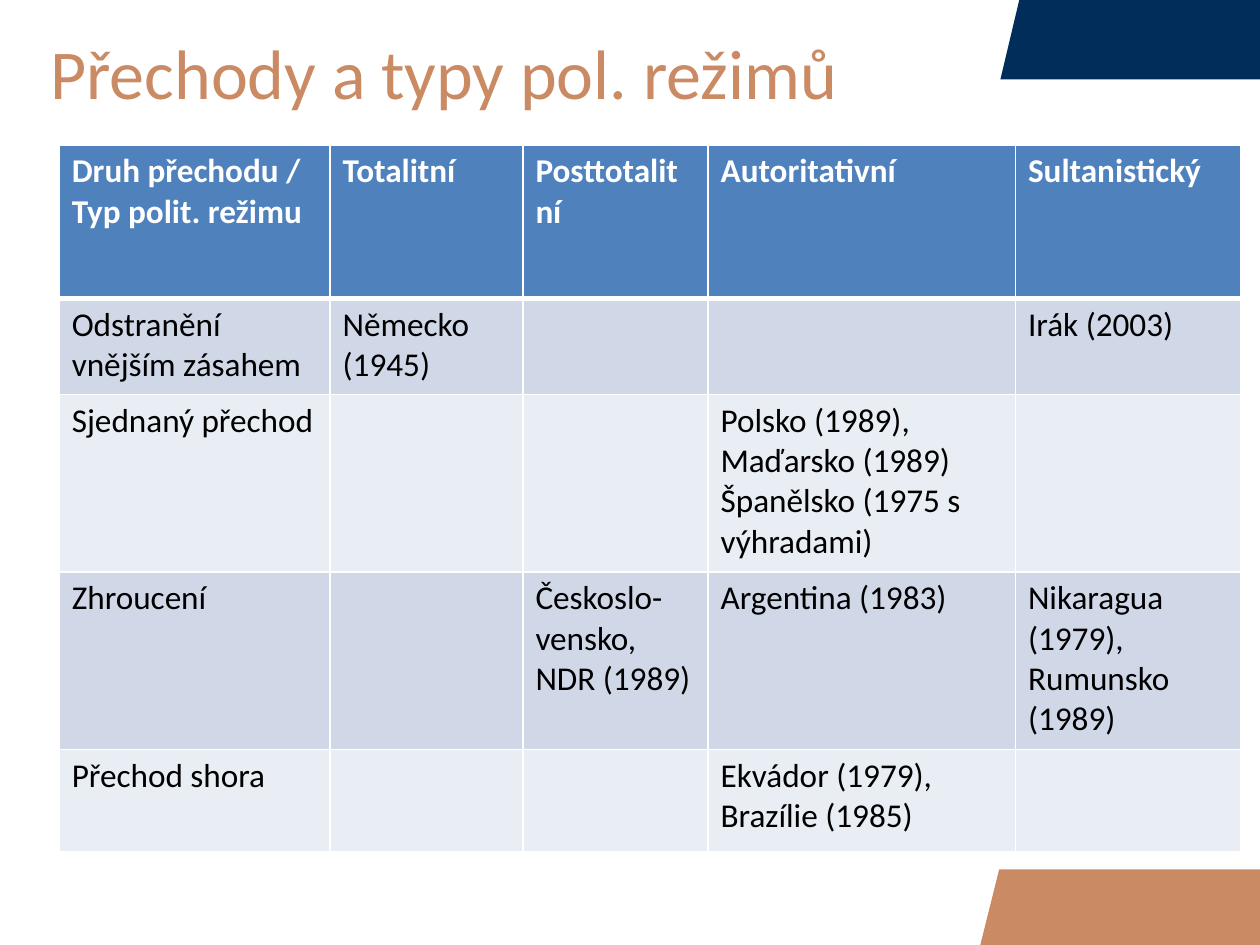
from lxml import etree
from pptx import Presentation
from pptx.dml.color import RGBColor
from pptx.enum.text import MSO_ANCHOR
from pptx.oxml.ns import qn
from pptx.util import Inches, Pt

MIDDLE = MSO_ANCHOR.MIDDLE
FONT = "Calibri"
COLORS = {
    "navy": "002D5A", "copper": "CA8A64", "head": "4F81BD",
    "odd": "D0D8E8", "even": "E9EDF4", "white": "FFFFFF", "black": "000000",
}
TITLE = "Přechody a typy pol. režimů"
ROWS = [
    ["Druh přechodu / Typ polit. režimu", "Totalitní", "Posttotalitní",
     "Autoritativní", "Sultanistický"],
    ["Odstranění vnějším zásahem", "Německo (1945)", "", "", "Irák (2003)"],
    ["Sjednaný přechod", "", "",
     "Polsko (1989), Maďarsko (1989) Španělsko (1975 s výhradami)", ""],
    ["Zhroucení", "", "Českoslo-vensko, NDR (1989)", "Argentina (1983)",
     "Nikaragua (1979), Rumunsko (1989)"],
    ["Přechod shora", "", "", "Ekvádor (1979), Brazílie (1985)", ""],
]
WIDTHS = [2.15, 1.53, 1.47, 2.44, 1.79]
HEIGHTS = [1.22, 0.76, 1.41, 1.41, 0.81]
# Corner bands: color, left, top, bottom
BANDS = [("navy", 7.94, 0, 0.63), ("copper", 7.78, 6.9, 7.5)]
SLANT = 0.15


def rgb(name):
    return RGBColor.from_string(COLORS[name])


def style(par, size, color, bold=False):
    font = par.font
    font.name, font.size, font.bold = FONT, Pt(size), bold
    font.color.rgb = rgb(color)


def add_band(slide, color, left, top, bottom):
    points = [(left + SLANT, top), (10, top), (10, bottom)]
    build = slide.shapes.build_freeform(Inches(left), Inches(bottom), 1)
    build.add_line_segments([(Inches(x), Inches(y)) for x, y in points])
    band = build.convert_to_shape()
    band.shadow.inherit = False
    band.fill.solid()
    band.fill.fore_color.rgb = rgb(color)
    band.line.fill.background()


def add_title(slide):
    box = slide.shapes.add_textbox(
        Inches(0.12), Inches(0.26), Inches(9.38), Inches(0.62))
    frame = box.text_frame
    frame.word_wrap = True
    frame.vertical_anchor = MIDDLE
    frame.margin_left = frame.margin_right = Inches(0.28)
    frame.text = TITLE
    style(frame.paragraphs[0], 40, "copper")


def add_borders(cell, row):
    """Draw white cell edges, thick between the header and the body."""
    props = cell._tc.get_or_add_tcPr()
    top = 3 if row == 1 else 1
    low = 3 if row == 0 else 1
    edges = [("L", 1), ("R", 1), ("T", top), ("B", low)]
    for place, (side, width) in enumerate(edges):
        line = etree.Element(qn("a:ln" + side), w=str(Pt(width)))
        fill = etree.SubElement(line, qn("a:solidFill"))
        etree.SubElement(fill, qn("a:srgbClr"), val=COLORS["white"])
        props.insert(place, line)


def add_grid(slide):
    frame = slide.shapes.add_table(
        len(ROWS), len(WIDTHS), Inches(0.47), Inches(1.15),
        Inches(sum(WIDTHS)), Inches(sum(HEIGHTS)))
    table = frame.table
    for col, width in zip(table.columns, WIDTHS):
        col.width = Inches(width)
    for row, height in zip(table.rows, HEIGHTS):
        row.height = Inches(height)
    for r, texts in enumerate(ROWS):
        head = r == 0
        shade = "head" if head else "odd" if r % 2 else "even"
        for c, text in enumerate(texts):
            cell = table.cell(r, c)
            cell.text = text
            cell.fill.solid()
            cell.fill.fore_color.rgb = rgb(shade)
            style(cell.text_frame.paragraphs[0], 19,
                  "white" if head else "black", head)
            add_borders(cell, r)


def main():
    deck = Presentation()
    deck.slide_width, deck.slide_height = Inches(10), Inches(7.5)
    slide = deck.slides.add_slide(deck.slide_layouts[6])
    for band in BANDS:
        add_band(slide, *band)
    add_title(slide)
    add_grid(slide)
    deck.save("out.pptx")


if __name__ == "__main__":
    main()
